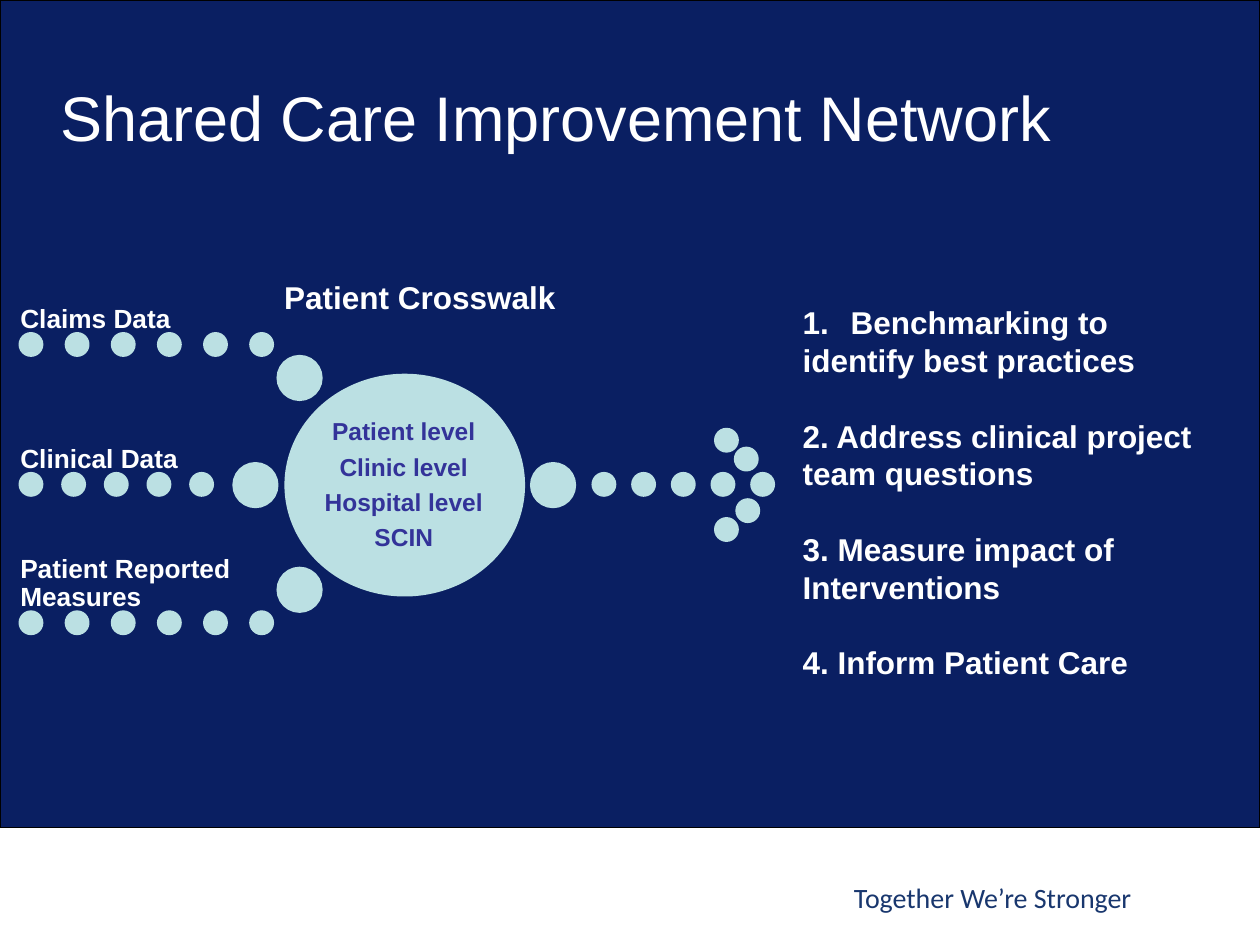
from dataclasses import dataclass, field

from lxml import etree
from pptx import Presentation
from pptx import util as u
from pptx.dml.color import RGBColor
from pptx.enum import shapes, text
from pptx.oxml.ns import qn

COLOURS = {
    "navy": "0A1F62",
    "black": "000000",
    "white": "FFFFFF",
    "slogan": "19376E",
    "bubble": "BBE0E3",
    "indigo": "333399",
}
DOT, HUB = 0.43, 0.86
LEFT = 0.41


@dataclass
class Label:
    left: float
    top: float
    width: float
    height: float
    lines: list[str]
    size: float
    colour: str = "white"
    font: str = "Arial"
    bold: bool = True
    frame: dict = field(default_factory=dict)
    para: dict = field(default_factory=dict)


@dataclass
class Stream:
    """A row of equally spaced dots, and the hub that joins it to the centre."""
    left: float
    top: float
    pitch: float
    count: int
    hub_left: float
    hub_top: float


def colour(name: str) -> RGBColor:
    return RGBColor.from_string(COLOURS[name])


def apply(target, values: dict) -> None:
    for name, value in values.items():
        setattr(target, name, value)


def add_filled(page, kind, left: float, top: float, width: float, height: float,
               fill: str, line: str, weight: float):
    shape = page.shapes.add_shape(kind, u.Cm(left), u.Cm(top), u.Cm(width), u.Cm(height))
    shape.shadow.inherit = False
    shape.fill.solid()
    shape.fill.fore_color.rgb = colour(fill)
    shape.line.color.rgb = colour(line)
    shape.line.width = u.Pt(weight)
    return shape


def add_bubble(page, left: float, top: float, width: float, height: float) -> None:
    add_filled(page, shapes.MSO_SHAPE.OVAL, left, top, width, height, "bubble", "bubble", 2)


def add_stream(page, stream: Stream) -> None:
    for step in range(stream.count):
        add_bubble(page, stream.left + step * stream.pitch, stream.top, DOT, DOT)
    add_bubble(page, stream.hub_left, stream.hub_top, HUB, HUB)


def add_label(page, label: Label):
    box = page.shapes.add_textbox(u.Cm(label.left), u.Cm(label.top),
                                  u.Cm(label.width), u.Cm(label.height))
    frame = box.text_frame
    apply(frame, {"word_wrap": True, **label.frame})
    for index, line in enumerate(label.lines):
        para = frame.paragraphs[0] if index == 0 else frame.add_paragraph()
        apply(para, label.para)
        span = para.add_run()
        span.text = line
        apply(span.font, {"name": label.font, "size": u.Pt(label.size), "bold": label.bold})
        span.font.color.rgb = colour(label.colour)
    return box


def number_paragraph(para, indent: float) -> None:
    """Give the paragraph automatic numbering with a hanging indent in cm."""
    properties = para._p.get_or_add_pPr()
    properties.set("marL", str(u.Cm(indent)))
    properties.set("indent", str(-u.Cm(indent)))
    etree.SubElement(properties, qn("a:buFont")).set("typeface", "+mj-lt")
    etree.SubElement(properties, qn("a:buAutoNum")).set("type", "arabicPeriod")


def insets(size: float) -> dict:
    sides = ("left", "top", "right", "bottom")
    return {f"margin_{side}": u.Cm(size) for side in sides}


MIDDLE = {"vertical_anchor": text.MSO_ANCHOR.MIDDLE}
SOURCE_FRAME = {"vertical_anchor": text.MSO_ANCHOR.BOTTOM, **insets(0)}
RIGHT = {"alignment": text.PP_ALIGN.RIGHT}

STREAMS = [
    Stream(LEFT, 6.73, 0.93, 6, 5.61, 7.19),
    Stream(LEFT, 9.55, 0.86, 5, 4.72, 9.35),
    Stream(LEFT, 12.34, 0.93, 6, 5.61, 11.46),
    Stream(11.96, 9.55, 0.8, 5, 10.72, 9.35),
]
ARROW_DOTS = [(14.43, 8.66), (14.83, 9.04), (14.86, 10.08), (14.43, 10.46)]
SOURCES = [("Claims Data", 5.61, 5.11), ("Clinical Data", 8.45, 3.86),
           ("Patient Reported Measures", 11.23, 5.11)]
GOALS = ["Benchmarking to", "identify best practices",
         "2. Address clinical project team questions",
         "3. Measure impact of", "Interventions", "4. Inform Patient Care"]
GOAL_STARTS = (2, 3, 5)

LABELS = [
    Label(15.54, 17.63, 7.52, 0.94, ["Together We’re Stronger"], 16, "slogan",
          "Calibri", False, para=RIGHT),
    Label(0.97, 0.76, 23.75, 3.18, ["Shared Care Improvement Network"], 36,
          bold=False, frame=MIDDLE),
    Label(6.45, 8.23, 3.38, 3.12,
          ["Patient level", "Clinic level", "Hospital level", "SCIN"], 14, "indigo",
          frame={**MIDDLE, **insets(0.05)},
          para={"alignment": text.PP_ALIGN.CENTER, "line_spacing": 0.9,
                "space_after": u.Pt(4.9)}),
    Label(4.8, 5.49, 6.65, 1.02, ["Patient Crosswalk"], 18, para=RIGHT),
    *(Label(LEFT, top, width, 1.12, [name], 15, frame=SOURCE_FRAME,
            para={"line_spacing": 0.9}) for name, top, width in SOURCES),
]


def main() -> None:
    deck = Presentation()
    deck.slide_width, deck.slide_height = u.Cm(25.4), u.Cm(19.05)
    page = deck.slides.add_slide(deck.slide_layouts[6])

    add_filled(page, shapes.MSO_SHAPE.RECTANGLE, 0, 0, 25.4, 16.69, "navy", "black", 0.75)
    for stream in STREAMS:
        add_stream(page, stream)
    for left, top in ARROW_DOTS:
        add_bubble(page, left, top, DOT, DOT)
    add_bubble(page, 5.77, 7.57, 4.78, 4.42)
    for label in LABELS:
        add_label(page, label)

    goals = add_label(page, Label(15.93, 5.99, 8.51, 7.95, GOALS, 18))
    paragraphs = goals.text_frame.paragraphs
    number_paragraph(paragraphs[0], 0.97)
    for index in GOAL_STARTS:
        paragraphs[index].space_before = u.Pt(21.6)

    deck.save("out.pptx")


if __name__ == "__main__":
    main()
